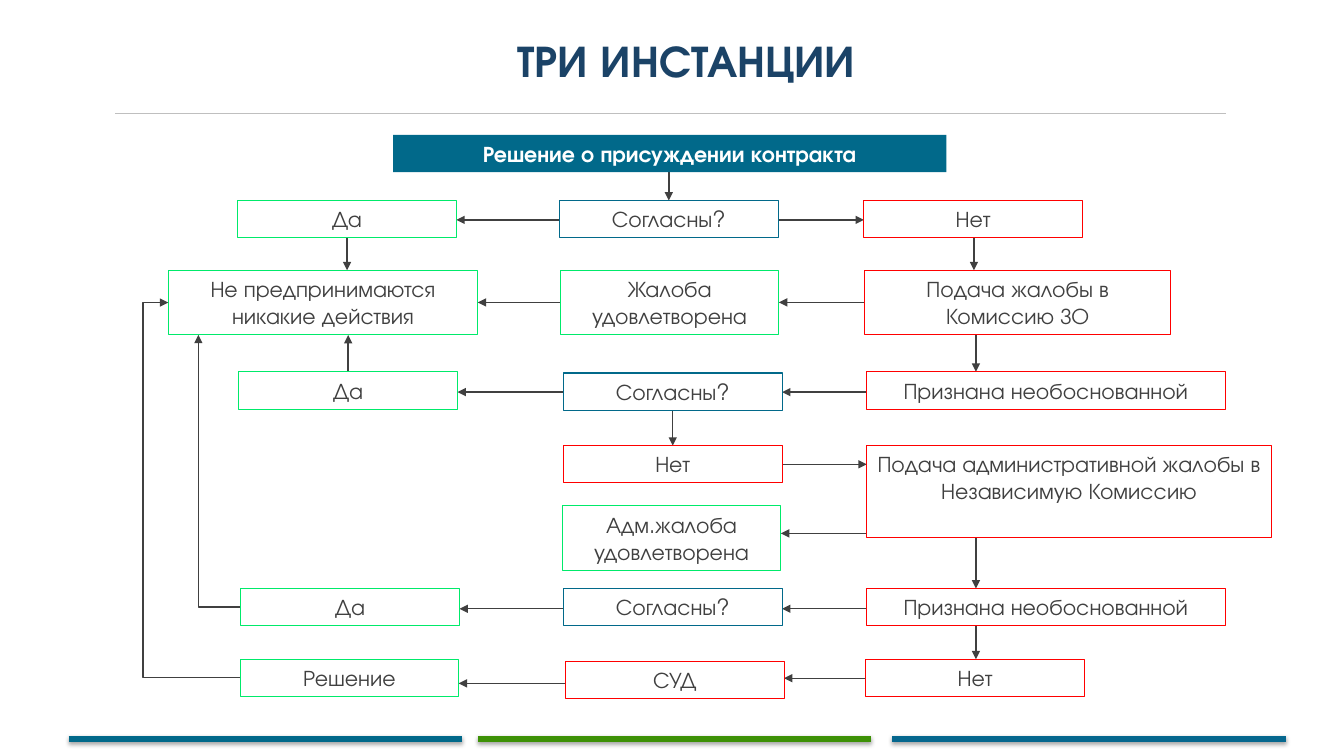
from lxml.etree import SubElement
from pptx import Presentation
from pptx.dml.color import RGBColor
from pptx.enum.shapes import MSO_CONNECTOR, MSO_SHAPE
from pptx.enum.text import MSO_ANCHOR, PP_ALIGN
from pptx.oxml.ns import qn
from pptx.util import Cm, Pt

FONT = "TeX Gyre Adventor"
TEAL, GREEN, RED, DARK = "01698A", "00EA6A", "FF0000", "404040"
WIDTH, LOW, TALL = 5.51, 0.94, 1.63

TITLE = "ТРИ ИНСТАНЦИИ"
DECISION = "Решение о присуждении контракта"
STEPS = {
    "decision": (DECISION, TEAL, 9.91, 3.4, 13.94, LOW),
    "agree1": ("Согласны?", TEAL, 14.1, 5.05, WIDTH, LOW),
    "yes1": ("Да", GREEN, 5.99, 5.05, WIDTH, LOW),
    "no1": ("Нет", RED, 21.77, 5.05, WIDTH, LOW),
    "no_action": ("Не предпринимаются никакие действия", GREEN, 4.24, 6.81, 7.8, TALL),
    "complaint": ("Подача жалобы в Комиссию ЗО", RED, 21.79, 6.81, 7.72, TALL),
    "granted1": ("Жалоба удовлетворена", GREEN, 14.12, 6.81, WIDTH, TALL),
    "rejected1": ("Признана необоснованной", RED, 21.84, 9.37, 9.04, LOW),
    "agree2": ("Согласны?", TEAL, 14.2, 9.4, WIDTH, LOW),
    "yes2": ("Да", GREEN, 6.02, 9.37, WIDTH, LOW),
    "no2": ("Нет", RED, 14.2, 11.23, WIDTH, LOW),
    "appeal": ("Подача административной жалобы в Независимую Комиссию",
               RED, 21.84, 11.23, 10.21, 2.31),
    "granted2": ("Адм.жалоба удовлетворена", GREEN, 14.17, 12.75, WIDTH, TALL),
    "rejected2": ("Признана необоснованной", RED, 21.84, 14.83, 9.04, LOW),
    "agree3": ("Согласны?", TEAL, 14.2, 14.83, WIDTH, LOW),
    "yes3": ("Да", GREEN, 6.07, 14.83, WIDTH, LOW),
    "no3": ("Нет", RED, 21.82, 16.61, WIDTH, LOW),
    "court": ("СУД", RED, 14.25, 16.66, WIDTH, LOW),
    "ruling": ("Решение", GREEN, 6.05, 16.61, WIDTH, LOW),
}
DOWN_OR_UP = [
    ("decision", "agree1"), ("yes1", "no_action"), ("no1", "complaint"),
    ("complaint", "rejected1"), ("yes2", "no_action"), ("agree2", "no2"),
    ("appeal", "rejected2"), ("rejected2", "no3"),
]
ACROSS = [
    ("agree1", "yes1", 5.54), ("agree1", "no1", 5.54),
    ("granted1", "no_action", 7.62), ("complaint", "granted1", 7.62),
    ("rejected1", "agree2", 9.88), ("agree2", "yes2", 9.88),
    ("no2", "appeal", 11.7), ("appeal", "granted2", 13.44),
    ("rejected2", "agree3", 15.34), ("agree3", "yes3", 15.34),
    ("no3", "court", 17.09), ("court", "ruling", 17.22),
]
FOOTER = [(1.73, TEAL), (12.04, "3D9106"), (22.48, "05678E")]
FOOTER_TOP, FOOTER_WIDTH = 18.62, 9.92

deck = Presentation()
deck.slide_width, deck.slide_height = Cm(33.87), Cm(19.05)
slide = deck.slides.add_slide(deck.slide_layouts[6])


def rgb(value):
    return RGBColor.from_string(value)


def write(shape, text, size=16, color=DARK, bold=False):
    frame = shape.text_frame
    frame.word_wrap = True
    frame.vertical_anchor = MSO_ANCHOR.TOP
    paragraph = frame.paragraphs[0]
    paragraph.alignment = PP_ALIGN.CENTER
    run = paragraph.add_run()
    run.text = text
    run.font.name, run.font.size, run.font.bold = FONT, Pt(size), bold
    run.font.color.rgb = rgb(color)


def line(x1, y1, x2, y2, color=DARK, weight=1, arrow=False, shadow=False,
         kind=MSO_CONNECTOR.STRAIGHT):
    link = slide.shapes.add_connector(kind, Cm(x1), Cm(y1), Cm(x2), Cm(y2))
    link.line.color.rgb = rgb(color)
    link.line.width = Pt(weight)
    if arrow:
        SubElement(link.line._get_or_add_ln(), qn("a:tailEnd"), type="triangle")
    effects = SubElement(link._element.spPr, qn("a:effectLst"))
    if shadow:
        outer = SubElement(effects, qn("a:outerShdw"), blurRad=str(Pt(3.1)),
                           dist=str(Pt(1.8)), dir="5400000", rotWithShape="0")
        black = SubElement(outer, qn("a:srgbClr"), val="000000")
        SubElement(black, qn("a:alpha"), val="35000")
    return link


def elbow(x1, y1, x2, y2, preset, bend=None):
    link = line(x1, y1, x2, y2, arrow=True, kind=MSO_CONNECTOR.ELBOW)
    geometry = link._element.spPr.find(qn("a:prstGeom"))
    geometry.set("prst", preset)
    if bend:
        SubElement(geometry.find(qn("a:avLst")), qn("a:gd"), name="adj1",
                   fmla=f"val {round(bend * 100000)}")


def place(name):
    return STEPS[name][2:]


for left, color in FOOTER:
    line(left, FOOTER_TOP, left + FOOTER_WIDTH, FOOTER_TOP, color, 4.5, shadow=True)

heading = slide.shapes.add_textbox(Cm(2.57), Cm(0.71), Cm(29.46), Cm(1.63))
write(heading, TITLE, size=32, color="1B4367", bold=True)
line(2.9, 2.87, 30.89, 2.87, "BFBFBF", 0.75)

for start, end in DOWN_OR_UP:
    left1, top1, _, height1 = place(start)
    left2, top2, _, height2 = place(end)
    x = max(left1, left2) + WIDTH / 2
    if top1 < top2:
        line(x, top1 + height1, x, top2, arrow=True)
    else:
        line(x, top1, x, top2 + height2, arrow=True)

for start, end, y in ACROSS:
    left1, _, width1, _ = place(start)
    left2, _, width2, _ = place(end)
    if left1 < left2:
        line(left1 + width1, y, left2, y, arrow=True)
    else:
        line(left1, y, left2 + width2, y, arrow=True)

left, top, _, height = place("no_action")
yes_left, yes_top, _, yes_height = place("yes3")
ruling_left, ruling_top, _, ruling_height = place("ruling")
elbow(yes_left, yes_top + yes_height / 2, 5, top + height, "bentConnector2")
elbow(ruling_left, ruling_top + ruling_height / 2, left, top + height / 2,
      "bentConnector3", bend=1.35)

for name, (text, color, *box) in STEPS.items():
    step = slide.shapes.add_shape(MSO_SHAPE.RECTANGLE, *map(Cm, box))
    step.shadow.inherit = False
    if name == "decision":
        step.fill.solid()
        step.fill.fore_color.rgb = rgb(color)
        step.line.fill.background()
        write(step, text, color="FFFFFF", bold=True)
    else:
        step.fill.background()
        step.line.color.rgb = rgb(color)
        step.line.width = Pt(0.75)
        write(step, text)

deck.save("out.pptx")
